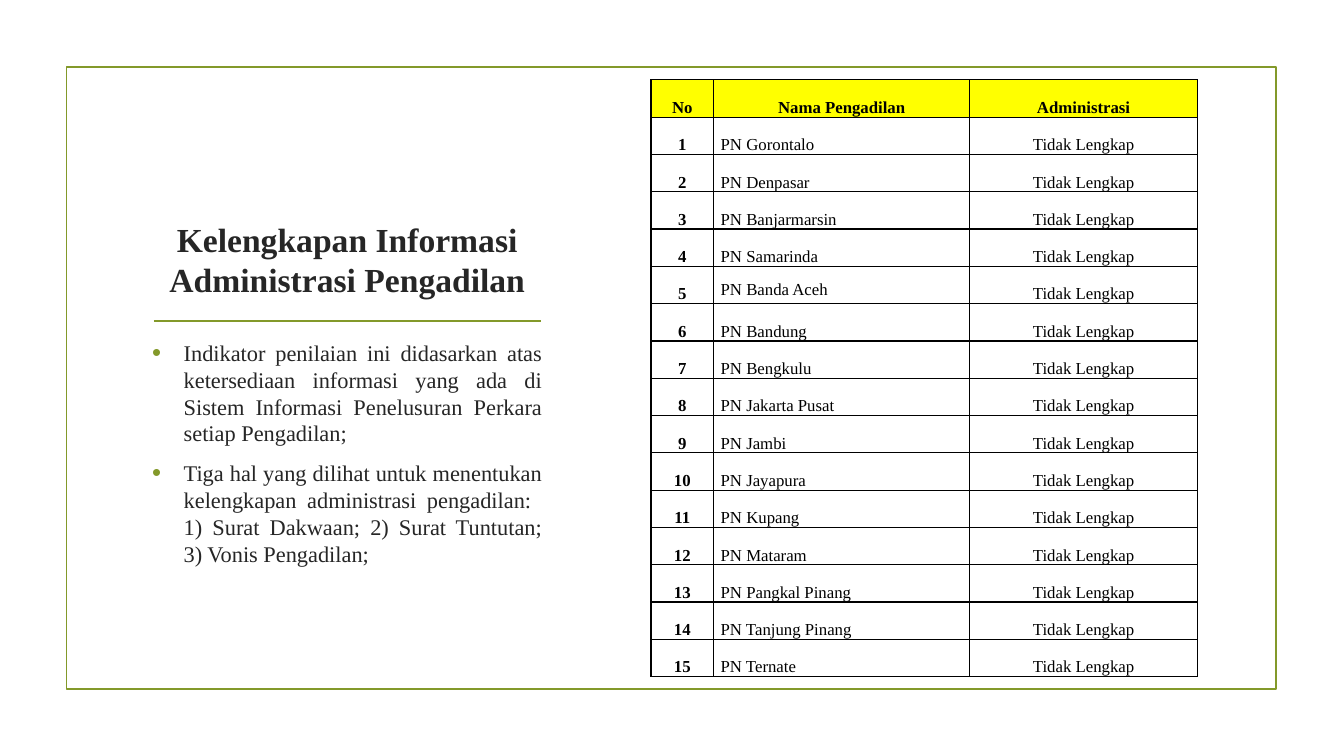
"""Slide on the completeness of court administration information, with a table of courts."""
from lxml.etree import SubElement
from pptx import Presentation
from pptx.dml.color import RGBColor
from pptx.enum.shapes import MSO_CONNECTOR, MSO_SHAPE
from pptx.enum.text import MSO_ANCHOR as ANCHOR, MSO_AUTO_SIZE, PP_ALIGN as ALIGN
from pptx.oxml.ns import qn
from pptx.util import Pt

GREEN = RGBColor(0x83, 0x99, 0x2A)
DARK = RGBColor(0x26, 0x26, 0x26)
BLACK = RGBColor(0, 0, 0)
WHITE = RGBColor(255, 255, 255)
YELLOW = RGBColor(255, 255, 0)

HEADINGS = ("No", "Nama Pengadilan", "Administrasi")
COURTS = ("Gorontalo", "Denpasar", "Banjarmarsin", "Samarinda", "Banda Aceh",
          "Bandung", "Bengkulu", "Jakarta Pusat", "Jambi", "Jayapura", "Kupang",
          "Mataram", "Pangkal Pinang", "Tanjung Pinang", "Ternate")
POINTS = (
    ("Indikator penilaian ini didasarkan atas ketersediaan informasi yang ada di "
     "Sistem Informasi Penelusuran Perkara setiap Pengadilan;",),
    ("Tiga hal yang dilihat untuk menentukan kelengkapan administrasi pengadilan: ",
     "1) Surat Dakwaan; 2) Surat Tuntutan; 3) Vonis Pengadilan;"),
)


def add_text(paragraph, text, size, color, bold=False):
    run = paragraph.add_run()
    run.text = text
    run.font.name = "Times New Roman"
    run.font.size = Pt(size)
    run.font.bold = bold
    run.font.color.rgb = color


def add_borders(cell):
    properties = cell._tc.get_or_add_tcPr()
    for position, side in enumerate(("a:lnL", "a:lnR", "a:lnT", "a:lnB")):
        border = SubElement(properties, qn(side), w=str(Pt(1)))
        properties.insert(position, border)
        fill = SubElement(border, qn("a:solidFill"))
        SubElement(fill, qn("a:srgbClr"), val=str(BLACK))


deck = Presentation()
deck.slide_width, deck.slide_height = Pt(960), Pt(540)
slide = deck.slides.add_slide(deck.slide_layouts[1])

frame = slide.shapes.add_shape(MSO_SHAPE.RECTANGLE, Pt(47.5), Pt(48), Pt(864), Pt(444))
frame.shadow.inherit = False
frame.fill.background()
frame.line.color.rgb = GREEN
frame.line.width = Pt(1.25)

divider = slide.shapes.add_connector(
    MSO_CONNECTOR.STRAIGHT, Pt(110), Pt(229.5), Pt(386.5), Pt(229.5))
divider.line.color.rgb = GREEN
divider.line.width = Pt(1.25)
SubElement(divider._element.spPr, qn("a:effectLst"))

title = slide.shapes.title
title.left, title.top, title.width, title.height = Pt(101.5), Pt(109.5), Pt(293), Pt(108)
title.text_frame.auto_size = MSO_AUTO_SIZE.NONE
title.text_frame.vertical_anchor = ANCHOR.BOTTOM
heading = title.text_frame.paragraphs[0]
heading.alignment = ALIGN.CENTER
add_text(heading, "Kelengkapan Informasi Administrasi Pengadilan", 24, DARK, True)

body = slide.placeholders[1]
body.left, body.top, body.width, body.height = Pt(101.5), Pt(238.5), Pt(293), Pt(192)
body.text_frame.auto_size = MSO_AUTO_SIZE.NONE
for number, lines in enumerate(POINTS):
    point = body.text_frame.add_paragraph() if number else body.text_frame.paragraphs[0]
    point.alignment = ALIGN.JUSTIFY
    point.space_before = Pt(3.2 if number else 0)
    point.space_after = Pt(6)
    layout = point._p.get_or_add_pPr()
    layout.set("marL", str(Pt(22.5)))
    layout.set("indent", str(-Pt(22.5)))
    bullet_color = SubElement(layout, qn("a:buClr"))
    SubElement(bullet_color, qn("a:srgbClr"), val=str(GREEN))
    SubElement(layout, qn("a:buSzPct"), val="115000")
    SubElement(layout, qn("a:buFont"), typeface="Arial")
    SubElement(layout, qn("a:buChar"), char="•")
    for position, line in enumerate(lines):
        if position:
            point.add_line_break()
        add_text(point, line, 16, DARK)

rows = [HEADINGS] + [(str(number), f"PN {court}", "Tidak Lengkap")
                     for number, court in enumerate(COURTS, 1)]
courts = slide.shapes.add_table(
    len(rows), len(HEADINGS), Pt(465), Pt(57), Pt(390.4), Pt(426.4)).table
courts.horz_banding = False
for column, width in zip(courts.columns, (44.8, 183, 162.6)):
    column.width = Pt(width)
for row, values in enumerate(rows):
    courts.rows[row].height = Pt(26.65)
    for column, value in enumerate(values):
        cell = courts.cell(row, column)
        cell.margin_left = cell.margin_right = Pt(5)
        cell.margin_top = cell.margin_bottom = 0
        cell.vertical_anchor = ANCHOR.MIDDLE if value == "PN Banda Aceh" else ANCHOR.BOTTOM
        cell.fill.solid()
        cell.fill.fore_color.rgb = WHITE if row else YELLOW
        add_borders(cell)
        entry = cell.text_frame.paragraphs[0]
        entry.alignment = ALIGN.LEFT if row and column == 1 else ALIGN.CENTER
        entry.line_spacing = 1.5
        add_text(entry, value, 12, BLACK, row == 0 or column == 0)

deck.save("out.pptx")
